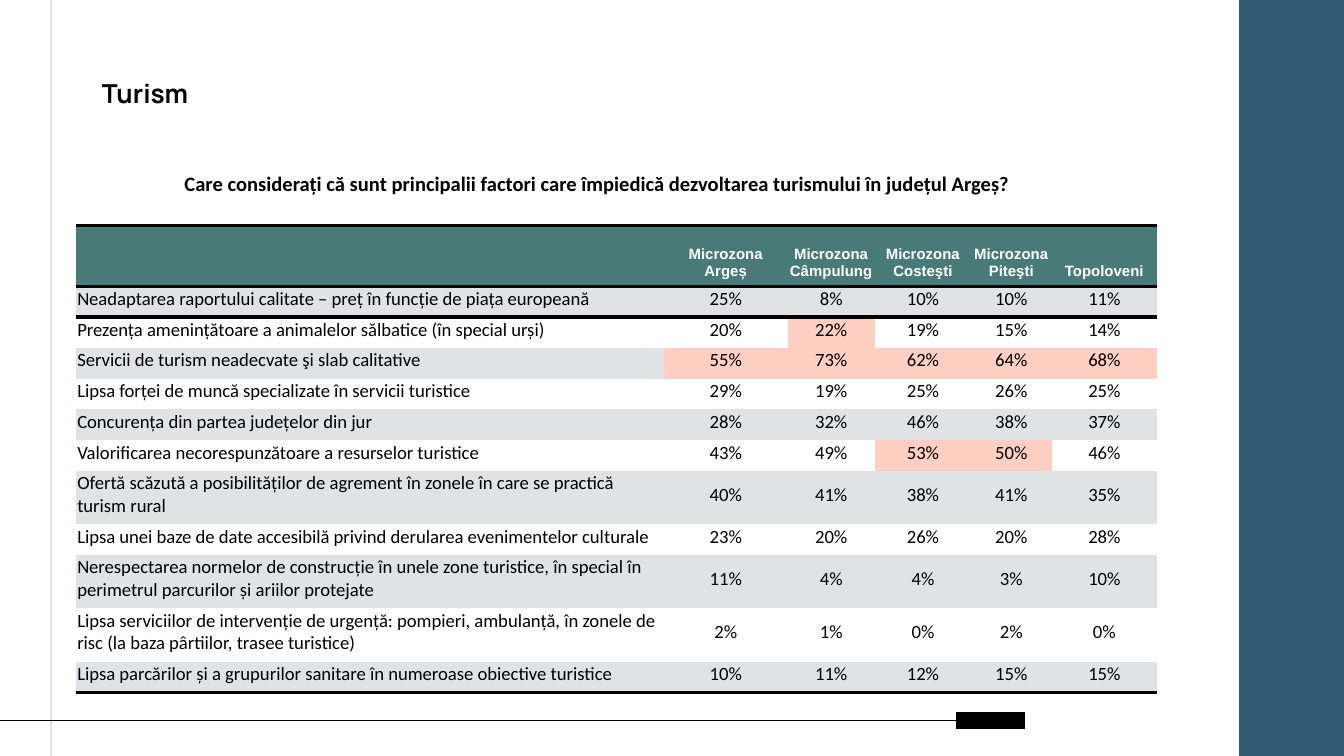
from lxml import etree
from pptx import Presentation, util as u
from pptx.dml.color import RGBColor
from pptx.enum import shapes, text
from pptx.oxml import ns

BLACK = RGBColor(0x00, 0x00, 0x00)
WHITE = RGBColor(0xFF, 0xFF, 0xFF)
NAVY = RGBColor(0x33, 0x5B, 0x74)
GREEN = RGBColor(0x48, 0x7B, 0x78)
GREY = RGBColor(0xDF, 0xE3, 0xE5)
PINK = RGBColor(0xFE, 0xCF, 0xC2)
NO_GRID_STYLE = "{2D5ABB26-0587-4C30-8999-92F81FD0307C}"

presentation = Presentation()
presentation.slide_width = u.Inches(10)
presentation.slide_height = u.Inches(5.625)
slide = presentation.slides.add_slide(presentation.slide_layouts[6])


def place(*shares):
    """Turn alternating x, y percentages of the slide into lengths."""
    sides = (presentation.slide_width, presentation.slide_height)
    return [round(sides[i % 2] * share / 100) for i, share in enumerate(shares)]


def style_text(text_frame, alignment, font_name, size, bold, color):
    for paragraph in text_frame.paragraphs:
        paragraph.alignment = alignment
        for run in paragraph.runs:
            run.font.name = font_name
            run.font.size = u.Pt(size)
            run.font.bold = bold
            run.font.color.rgb = color


# Side band and thin rules
band = slide.shapes.add_shape(shapes.MSO_SHAPE.RECTANGLE, *place(92.2, 0, 7.8, 100))
band.shadow.inherit = False
band.fill.solid()
band.fill.fore_color.rgb = NAVY
band.line.fill.background()

rules = [
    ((3.8, -0.7, 3.8, 100.7), GREY, 0.75),
    ((76.25, 95.3, 71.15, 95.3), BLACK, 9),
    ((71.15, 95.3, -0.9, 95.3), BLACK, 0.75),
]
for ends, color, width in rules:
    rule = slide.shapes.add_connector(shapes.MSO_CONNECTOR.STRAIGHT, *place(*ends))
    rule.line.color.rgb = color
    rule.line.width = u.Pt(width)
    etree.SubElement(rule._element.spPr, ns.qn("a:effectLst"))

# Table
header = ["", "Microzona\nArgeș", "Microzona\nCâmpulung", "Microzona\nCosteşti",
          "Microzona\nPiteşti", "Topoloveni"]
factors = [
    ("Neadaptarea raportului calitate – preț în funcție de piața europeană", 25, 8, 10, 10, 11),
    ("Prezența amenințătoare a animalelor sălbatice (în special urși)", 20, 22, 19, 15, 14),
    ("Servicii de turism neadecvate şi slab calitative", 55, 73, 62, 64, 68),
    ("Lipsa forței de muncă specializate în servicii turistice", 29, 19, 25, 26, 25),
    ("Concurența din partea județelor din jur", 28, 32, 46, 38, 37),
    ("Valorificarea necorespunzătoare a resurselor turistice", 43, 49, 53, 50, 46),
    ("Ofertă scăzută a posibilităților de agrement în zonele în care se practică turism rural",
     40, 41, 38, 41, 35),
    ("Lipsa unei baze de date accesibilă privind derularea evenimentelor culturale",
     23, 20, 26, 20, 28),
    ("Nerespectarea normelor de construcție în unele zone turistice, în special în perimetrul "
     "parcurilor și ariilor protejate", 11, 4, 4, 3, 10),
    ("Lipsa serviciilor de intervenție de urgență: pompieri, ambulanță, în zonele de risc "
     "(la baza pârtiilor, trasee turistice)", 2, 1, 0, 2, 0),
    ("Lipsa parcărilor și a grupurilor sanitare în numeroase obiective turistice",
     10, 11, 12, 15, 15),
]
highlights = {(2, 2), (6, 3), (6, 4)} | {(3, column) for column in range(1, 6)}
column_shares = [43.75, 9.2, 6.5, 7.15, 6, 7.85]
single_row, double_row = 4.04, 7
row_shares = [8] + [double_row if len(factor[0]) > 80 else single_row for factor in factors]

rows = [header] + [[name] + [f"{value}%" for value in values] for name, *values in factors]
frame = slide.shapes.add_table(
    len(rows), len(header), *place(5.65, 29.87, sum(column_shares), sum(row_shares)))
table = frame.table
table._tbl.tblPr.find(ns.qn("a:tableStyleId")).text = NO_GRID_STYLE
for column, share in zip(table.columns, column_shares):
    column.width = place(share)[0]
for row, share in zip(table.rows, row_shares):
    row.height = place(0, share)[1]

for r, labels in enumerate(rows):
    for c, label in enumerate(labels):
        cell = table.cell(r, c)
        cell.margin_left = cell.margin_right = cell.margin_top = u.Inches(0.01)
        cell.margin_bottom = u.Inches(0.05)
        bottom = r == 0 or c == 0
        cell.vertical_anchor = text.MSO_ANCHOR.BOTTOM if bottom else text.MSO_ANCHOR.MIDDLE
        cell.text_frame.text = label
        alignment = text.PP_ALIGN.CENTER if c else text.PP_ALIGN.LEFT
        cell.fill.solid()
        if r == 0:
            cell.fill.fore_color.rgb = GREEN
            style_text(cell.text_frame, alignment, "Arial", 8, True, WHITE)
        else:
            stripe = GREY if r % 2 else WHITE
            cell.fill.fore_color.rgb = PINK if (r, c) in highlights else stripe
            style_text(cell.text_frame, alignment, "Calibri", 10, False, BLACK)

        edges = {0: ["lnT", "lnB"], 1: ["lnT"], len(rows) - 1: ["lnB"]}.get(r, [])
        for position, edge in enumerate(edges):
            border = etree.Element(ns.qn(f"a:{edge}"), w=str(u.Pt(2)))
            fill = etree.SubElement(border, ns.qn("a:solidFill"))
            etree.SubElement(fill, ns.qn("a:srgbClr"), val=str(BLACK))
            cell._tc.tcPr.insert(position, border)

# Title and question
captions = [
    ("Turism", (6.6, 8.5, 84.3, 7.1), 0.1, text.PP_ALIGN.LEFT, "Manrope", 14),
    ("Care considerați că sunt principalii factori care împiedică dezvoltarea turismului "
     "în județul Argeș?", (11.2, 21.7, 66.5, 5.2), 0.05, text.PP_ALIGN.CENTER, "Calibri", 11),
]
for words, area, inset, alignment, font_name, size in captions:
    text_frame = slide.shapes.add_textbox(*place(*area)).text_frame
    text_frame.word_wrap = True
    text_frame.margin_top = text_frame.margin_bottom = u.Inches(inset)
    text_frame.text = words
    style_text(text_frame, alignment, font_name, size, True, BLACK)

presentation.save("out.pptx")
